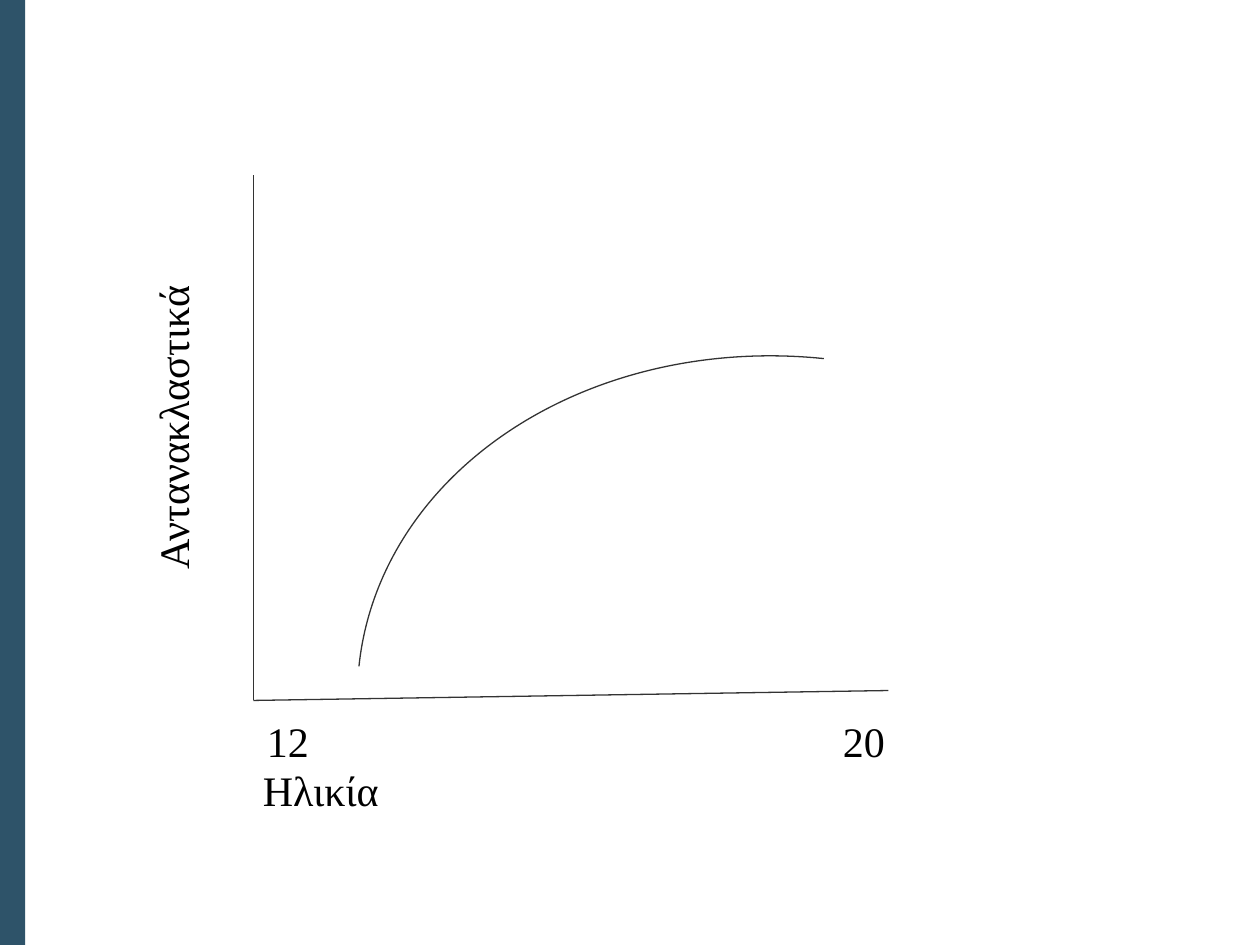
"""Build a slide with a curve of reflexes against age."""
from typing import NamedTuple

from lxml.etree import SubElement
from pptx import Presentation
from pptx.dml.color import RGBColor
from pptx.enum.shapes import MSO_CONNECTOR as Connector, MSO_SHAPE as Shape
from pptx.enum.text import MSO_ANCHOR as Anchor
from pptx.oxml.ns import qn
from pptx.slide import Slide
from pptx.util import Cm, Pt

BLACK = RGBColor(0x00, 0x00, 0x00)
INK = RGBColor(0x33, 0x33, 0x33)
TEAL = RGBColor(0x2E, 0x53, 0x69)
LINE_WIDTH = Pt(0.75)
LABEL_HEIGHT = 1.3


class Point(NamedTuple):
    x: float
    y: float


class Label(NamedTuple):
    text: str
    left: float
    top: float
    width: float
    rotation: float = 0


AXIS_TOP = Point(5.11, 3.53)
ORIGIN = Point(5.11, 14.12)
AXIS_END = Point(17.91, 13.92)
LABELS = [
    Label("Ηλικία", 5.05, 15.32, 2.87),
    Label("12", 5.13, 14.33, 1.37),
    Label("20", 16.74, 14.33, 1.37),
    Label("Αντανακλαστικά", 0.38, 7.92, 6.3, 270),
]


def add_stripe(page: Slide, height: int) -> None:
    """Draw the coloured band down the left edge."""
    stripe = page.shapes.add_shape(Shape.RECTANGLE, 0, 0, Cm(0.51), height)
    stripe.shadow.inherit = False
    stripe.fill.solid()
    stripe.fill.fore_color.rgb = TEAL
    stripe.line.fill.background()


def add_axis(page: Slide, start: Point, end: Point) -> None:
    """Draw one straight axis."""
    axis = page.shapes.add_connector(
        Connector.STRAIGHT, Cm(start.x), Cm(start.y), Cm(end.x), Cm(end.y)
    )
    axis.line.color.rgb = INK
    axis.line.width = LINE_WIDTH
    SubElement(axis.element.spPr, qn("a:effectLst"))


def add_label(page: Slide, label: Label) -> None:
    """Write one axis label."""
    box = page.shapes.add_textbox(
        Cm(label.left), Cm(label.top), Cm(label.width), Cm(LABEL_HEIGHT)
    )
    box.rotation = label.rotation
    box.text_frame.word_wrap = False
    box.text_frame.vertical_anchor = Anchor.MIDDLE
    para = box.text_frame.paragraphs[0]
    para.text = label.text
    para.line_spacing = 0.93
    para.font.name = "Times New Roman"
    para.font.size = Pt(24)
    para.font.color.rgb = BLACK


def add_curve(page: Slide) -> None:
    """Draw the rising curve as a turned quarter arc."""
    curve = page.shapes.add_shape(Shape.ARC, Cm(8.74), Cm(5.64), Cm(14.27), Cm(17.37))
    curve.rotation = 275.9
    curve.shadow.inherit = False
    curve.fill.background()
    curve.line.color.rgb = INK
    curve.line.width = LINE_WIDTH


def main() -> None:
    """Build and save the deck."""
    deck = Presentation()
    deck.slide_width, deck.slide_height = Cm(25.4), Cm(19.05)
    page = deck.slides.add_slide(deck.slide_layouts.get_by_name("Blank"))
    add_stripe(page, deck.slide_height)
    add_axis(page, AXIS_TOP, ORIGIN)
    add_axis(page, ORIGIN, AXIS_END)
    for label in LABELS:
        add_label(page, label)
    add_curve(page)
    deck.save("out.pptx")


if __name__ == "__main__":
    main()
